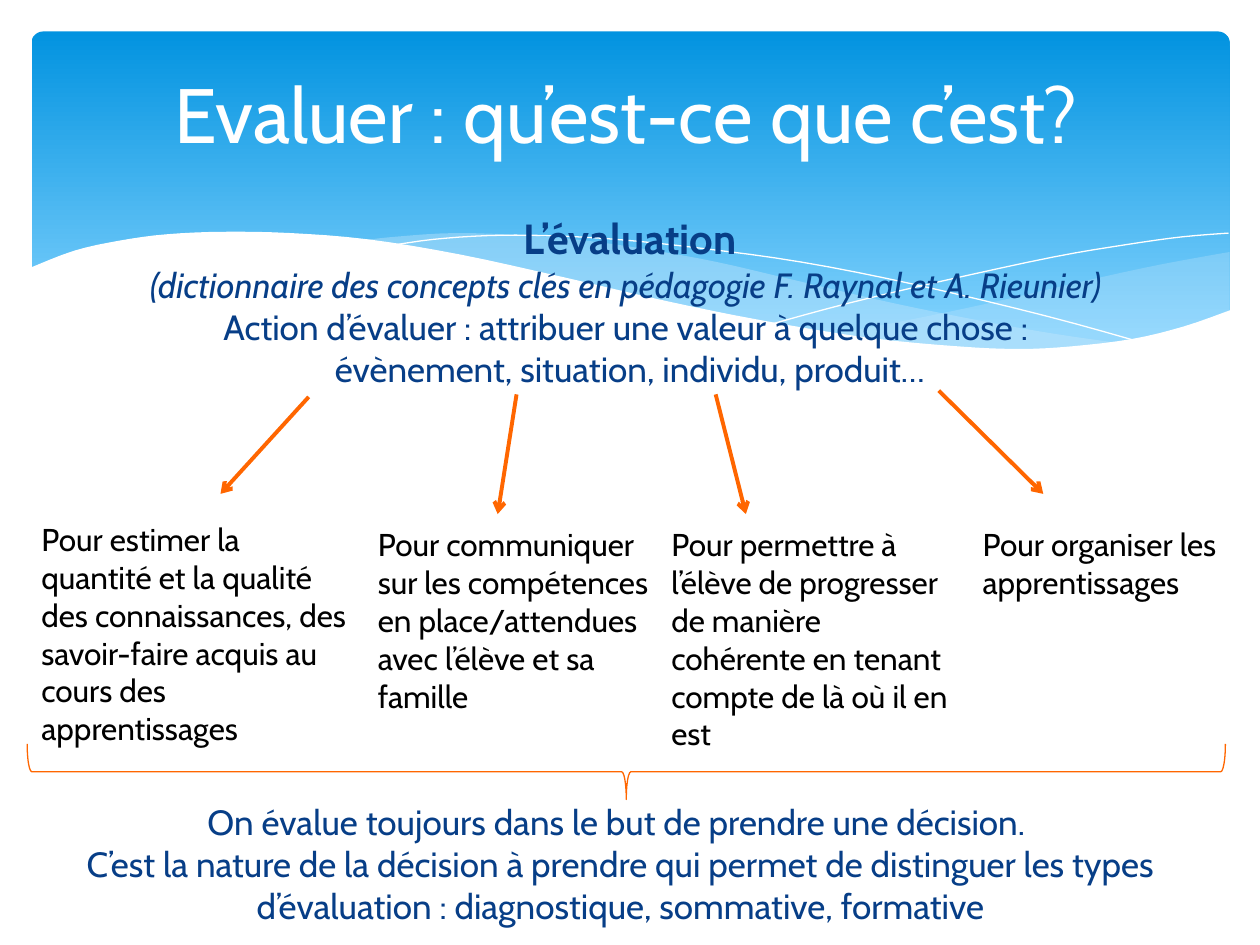
from lxml import etree
from pptx import Presentation
from pptx.dml.color import RGBColor
from pptx.enum.shapes import MSO_CONNECTOR, MSO_SHAPE
from pptx.enum.text import MSO_ANCHOR, PP_ALIGN
from pptx.oxml.ns import qn
from pptx.util import Inches, Pt

WHITE = RGBColor(0xFF, 0xFF, 0xFF)
BLACK = RGBColor(0, 0, 0)
NAVY = RGBColor(0x07, 0x3E, 0x87)
ORANGE = RGBColor(0xFF, 0x66, 0x00)
SKY = RGBColor(0x02, 0x93, 0xE0)
LIGHT_SKY = RGBColor(0x83, 0xD3, 0xFE)
PALE = RGBColor(0xC6, 0xE7, 0xFC)
CENTER, LEFT = PP_ALIGN.CENTER, PP_ALIGN.LEFT
TOP, MIDDLE = MSO_ANCHOR.TOP, MSO_ANCHOR.MIDDLE
ROUNDED, BRACE = MSO_SHAPE.ROUNDED_RECTANGLE, MSO_SHAPE.RIGHT_BRACE
STRAIGHT = MSO_CONNECTOR.STRAIGHT
FONT = "Cabin"

TITLE = "Evaluer : qu’est-ce que c’est?"
DEFINITION = [
    ("L’évaluation", dict(size=24, bold=True)),
    ("(dictionnaire des concepts clés en pédagogie F. Raynal et A. Rieunier) ", dict(italic=True)),
    ("Action d’évaluer : attribuer une valeur à quelque chose : ", {}),
    ("évènement, situation, individu, produit…", {}),
]
PURPOSES = [
    ("Pour estimer la quantité et la qualité des connaissances, des savoir-faire acquis "
     "au cours des apprentissages", (0.23, 4.08, 2.66, 1.92)),
    ("Pour communiquer sur les compétences en place/attendues avec l’élève et sa famille",
     (2.9, 4.12, 2.36, 1.62)),
    ("Pour permettre à l’élève de progresser de manière cohérente en tenant compte "
     "de là où il en est", (5.23, 4.12, 2.44, 1.92)),
    ("Pour organiser les apprentissages", (7.7, 4.12, 2.17, 0.71)),
]
CONCLUSION = [
    ("On évalue toujours dans le but de prendre une décision. ", {}),
    ("C’est la nature de la décision à prendre qui permet de distinguer les types "
     "d’évaluation : diagnostique, sommative, formative", {}),
]
ARROWS = [
    ((2.45, 3.15), (1.75, 3.92)),
    ((4.1, 3.13), (3.95, 4.08)),
    ((5.68, 3.13), (5.92, 4.08)),
    ((7.45, 3.1), (8.28, 3.92)),
]
RIGHT_RIBBON = [
    [(9.76, 2), (9.21, 2.1), (8.61, 2.23), (7.79, 2.42), (7.06, 2.57), (6.61, 2.65)],
    [(6.61, 2.65), (7.19, 2.72), (7.69, 2.77), (8.14, 2.78), (8.63, 2.75),
     (9.05, 2.69), (9.42, 2.59), (9.76, 2.47)],
]
LONG_RIBBON = [
    [(8.93, 2.73), (8.37, 2.65), (7.75, 2.54), (7.06, 2.4), (6.29, 2.22), (5.69, 2.08),
     (5.14, 1.98), (4.65, 1.91), (4.2, 1.87), (3.61, 1.85), (3.13, 1.88), (2.86, 1.91)],
    [(2.86, 1.91), (3.42, 1.99), (4.04, 2.11), (4.49, 2.22), (5.3, 2.4), (6.01, 2.55),
     (6.65, 2.66), (7.22, 2.74), (7.73, 2.77), (8.18, 2.78), (8.57, 2.77), (8.93, 2.73)],
]
FALLING_LINE = [
    [(3.09, 1.95), (3.44, 1.9), (3.87, 1.87), (4.33, 1.87), (4.89, 1.9), (5.56, 1.97),
     (6.36, 2.08), (7.27, 2.26), (8.31, 2.51), (9.07, 2.72)],
]
RISING_LINE = [
    [(6.13, 2.57), (6.72, 2.41), (7.48, 2.23), (8.36, 2.04), (8.95, 1.94), (9.38, 1.88), (9.75, 1.85)],
]
WHITE_WAVE = [
    [(9.77, 2.46), (9.4, 2.59), (8.99, 2.69), (8.5, 2.75), (8.09, 2.77), (7.61, 2.75),
     (6.88, 2.68), (6.03, 2.54), (5.29, 2.39), (4.47, 2.2), (3.65, 2.02), (2.92, 1.9),
     (2.3, 1.85), (1.77, 1.84), (1.32, 1.86), (0.95, 1.91), (0.59, 1.99), (0.23, 2.13)],
    [(0.23, 3.29), (9.77, 3.29)],
]
WAVES = [
    (RIGHT_RIBBON, PALE, 29),
    (LONG_RIBBON, PALE, 40),
    (FALLING_LINE, None, 100),
    (RISING_LINE, None, 100),
    (WHITE_WAVE, WHITE, 100),
]


def smooth(points, steps=4):
    padded = [points[0], *points, points[-1]]
    curve = [points[0]]
    for a, b, c, d in zip(padded, padded[1:], padded[2:], padded[3:]):
        for t in (i / steps for i in range(1, steps + 1)):
            curve.append(tuple(
                q + t / 2 * (r - p + t * (2 * p - 5 * q + 4 * r - s + t * (3 * (q - r) + s - p)))
                for p, q, r, s in zip(a, b, c, d)))
    return curve


def add_wave(shapes, curves, color, opacity):
    points = [(Inches(x), Inches(y)) for curve in curves for x, y in smooth(curve)]
    builder = shapes.build_freeform(*points[0], scale=1.0)
    builder.add_line_segments(points[1:], close=color is not None)
    sp = builder.convert_to_shape()
    sp.shadow.inherit = False
    if color is None:
        sp.fill.background()
        sp.line.color.rgb = WHITE
        sp.line.width = Pt(0)
        return
    sp.fill.solid()
    sp.fill.fore_color.rgb = color
    sp.line.fill.background()
    if opacity < 100:
        clr = sp._element.spPr.find(qn("a:solidFill")).find(qn("a:srgbClr"))
        etree.SubElement(clr, qn("a:alpha")).set("val", str(opacity * 1000))


def write(sp, paragraphs, size=20, color=NAVY, align=CENTER, anchor=TOP):
    tf = sp.text_frame
    tf.word_wrap = True
    tf.vertical_anchor = anchor
    for i, (text, style) in enumerate(paragraphs):
        p = tf.add_paragraph() if i else tf.paragraphs[0]
        p.alignment = align
        p.space_before = Pt(0)
        r = p.add_run()
        r.text = text
        r.font.name = FONT
        r.font.size = Pt(style.get("size", size))
        r.font.bold = style.get("bold", False)
        r.font.italic = style.get("italic", False)
        r.font.color.rgb = color


def add_text(shapes, box, paragraphs, **style):
    write(shapes.add_textbox(*map(Inches, box)), paragraphs, **style)


def add_arrow(shapes, start, end):
    line = shapes.add_connector(STRAIGHT, *map(Inches, start + end))
    line.line.color.rgb = ORANGE
    line.line.width = Pt(2.25)
    etree.SubElement(line.line._get_or_add_ln(), qn("a:tailEnd")).set("type", "arrow")
    etree.SubElement(line._element.spPr, qn("a:effectLst"))


def main():
    prs = Presentation()
    prs.slide_width, prs.slide_height = Inches(10), Inches(7.5)
    s = prs.slides.add_slide(prs.slide_layouts[5])
    shapes = s.shapes
    title = shapes.title

    banner = shapes.add_shape(ROUNDED, *map(Inches, (0.25, 0.25, 9.51, 2.7)))
    banner.adjustments[0] = 0.034
    banner.shadow.inherit = False
    banner.line.fill.background()
    banner.fill.gradient()
    banner.fill.gradient_angle = 270
    for stop, position, color in zip(banner.fill.gradient_stops, (0, 0.9), (SKY, LIGHT_SKY)):
        stop.position = position
        stop.color.rgb = color
    for wave in WAVES:
        add_wave(shapes, *wave)

    title.left, title.top, title.width, title.height = map(Inches, (0.47, 0.21, 9, 1.37))
    write(title, [(TITLE, {})], size=44, color=WHITE, anchor=MIDDLE)
    shapes._spTree.append(title._element)

    add_text(shapes, (0.67, 1.64, 8.66, 1.65), DEFINITION)
    for start, end in ARROWS:
        add_arrow(shapes, start, end)
    for text, box in PURPOSES:
        add_text(shapes, box, [(text, {})], size=18, color=BLACK, align=LEFT)
    add_text(shapes, (0.21, 6.3, 9.43, 1.11), CONCLUSION)

    brace = shapes.add_shape(BRACE, *map(Inches, (4.75, 1.37, 0.44, 9.51)))
    brace.rotation = 90
    brace.shadow.inherit = False
    brace.fill.background()
    brace.line.color.rgb = ORANGE
    brace.line.width = Pt(0.75)

    prs.save("out.pptx")


if __name__ == "__main__":
    main()
